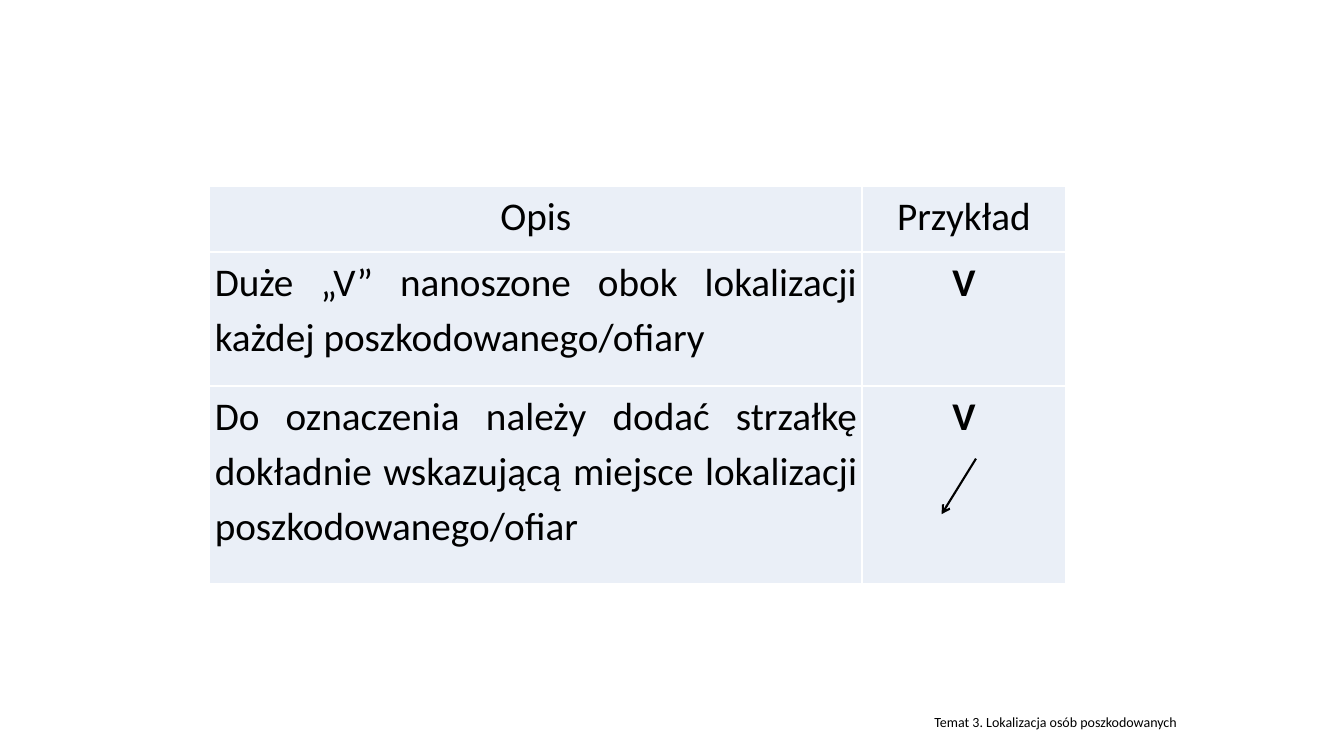
"""Builds the slide on marking the location of casualties."""
from lxml import etree
from pptx import Presentation
from pptx.dml.color import RGBColor
from pptx.enum import shapes, text
from pptx.oxml import ns
from pptx.util import Inches, Pt

BLACK, WHITE, PALE_BLUE = "000000", "FFFFFF", "EAEFF7"
CENTER, JUSTIFY = text.PP_ALIGN.CENTER, text.PP_ALIGN.JUSTIFY
COLUMN_WIDTHS = (6.47, 2.02)
ROW_HEIGHTS = (0.65, 1.33, 1.96)
ROWS = (
    ("Opis", "Przykład"),
    ("Duże „V” nanoszone obok lokalizacji każdej poszkodowanego/ofiary", "V"),
    ("Do oznaczenia należy dodać strzałkę dokładnie wskazującą miejsce "
     "lokalizacji poszkodowanego/ofiar", "V"),
)


def color(value):
    """Turn a hex string into a colour."""
    return RGBColor.from_string(value)


def add_span(para, words, size, bold=False):
    """Add one black Calibri run to a paragraph."""
    span = para.add_run()
    span.text = words
    span.font.name = "Calibri"
    span.font.size = Pt(size)
    span.font.bold = bold
    span.font.color.rgb = color(BLACK)


def add_borders(cell, value, width):
    """Draw solid lines on all four sides of a cell."""
    properties = cell._tc.get_or_add_tcPr()
    for position, side in enumerate(("lnL", "lnR", "lnT", "lnB")):
        line = etree.Element(ns.qn(f"a:{side}"), w=str(Pt(width)))
        fill = etree.SubElement(line, ns.qn("a:solidFill"))
        etree.SubElement(fill, ns.qn("a:srgbClr"), val=value)
        properties.insert(position, line)


def fill_cell(cell, words, alignment, bold):
    """Set the text, margins, fill and borders of a cell."""
    cell.margin_left = cell.margin_right = Inches(0.05)
    cell.margin_top = cell.margin_bottom = Inches(0)
    cell.fill.solid()
    cell.fill.fore_color.rgb = color(PALE_BLUE)
    add_borders(cell, WHITE, 1)
    para = cell.text_frame.paragraphs[0]
    para.alignment = alignment
    para.line_spacing = 1.15
    add_span(para, words, 28, bold)


def add_marking_table(page, left, top):
    """Add the table of markings and their examples."""
    table = page.shapes.add_table(
        len(ROWS), len(COLUMN_WIDTHS), Inches(left), Inches(top),
        Inches(sum(COLUMN_WIDTHS)), Inches(sum(ROW_HEIGHTS))).table
    for column, width in zip(table.columns, COLUMN_WIDTHS):
        column.width = Inches(width)
    for row, height in zip(table.rows, ROW_HEIGHTS):
        row.height = Inches(height)
    for i, row in enumerate(ROWS):
        for j, words in enumerate(row):
            is_description = i > 0 and j == 0
            is_example = i > 0 and j == 1
            fill_cell(table.cell(i, j), words,
                      JUSTIFY if is_description else CENTER, is_example)


def add_arrow(page, start, end):
    """Add a black line with an open arrowhead at its end."""
    arrow = page.shapes.add_connector(
        shapes.MSO_CONNECTOR.STRAIGHT, *map(Inches, start + end))
    arrow.line.color.rgb = color(BLACK)
    arrow.line.width = Pt(1.5)
    etree.SubElement(arrow.line._get_or_add_ln(), ns.qn("a:tailEnd"), type="arrow")
    etree.SubElement(arrow._element.spPr, ns.qn("a:effectLst"))


def add_footer(page, words, left, top, width, height):
    """Add the small topic line at the foot of the slide."""
    box = page.shapes.add_textbox(*map(Inches, (left, top, width, height)))
    box.text_frame.word_wrap = True
    box.text_frame.auto_size = text.MSO_AUTO_SIZE.SHAPE_TO_FIT_TEXT
    add_span(box.text_frame.paragraphs[0], words, 10)


def main():
    """Build and save the deck."""
    deck = Presentation()
    deck.slide_width, deck.slide_height = Inches(13.33), Inches(7.5)
    page = deck.slides.add_slide(deck.slide_layouts[6])
    add_marking_table(page, 2.08, 1.85)
    add_arrow(page, (9.68, 4.55), (9.34, 5.1))
    add_footer(page, "Temat 3. Lokalizacja osób poszkodowanych",
               9.17, 7.03, 4.04, 0.27)
    deck.save("out.pptx")


if __name__ == "__main__":
    main()
